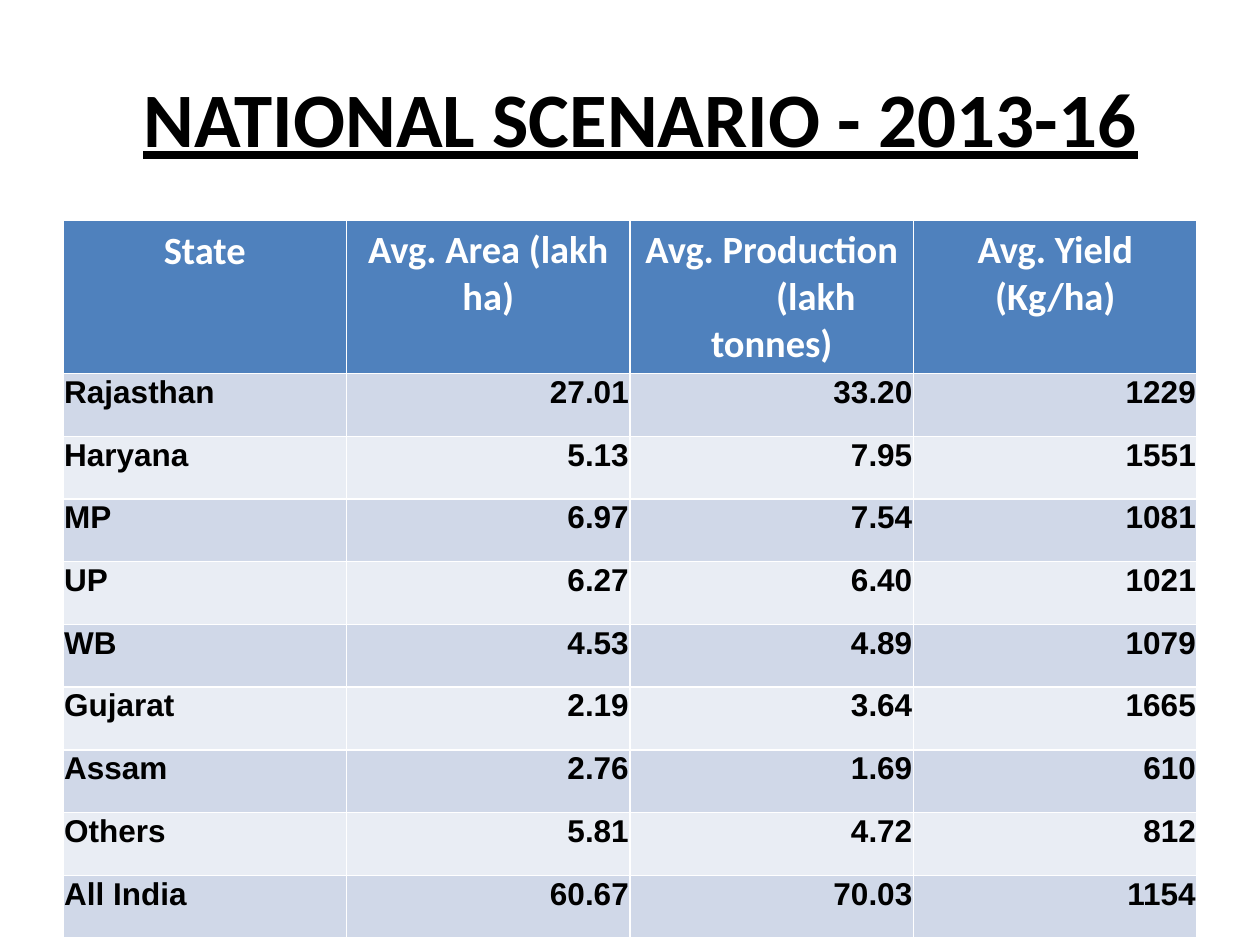
from pptx import Presentation
from pptx.dml.color import RGBColor
from pptx.enum.text import MSO_ANCHOR, PP_ALIGN
from pptx.util import Inches, Pt

LEFT, CENTER, RIGHT = PP_ALIGN.LEFT, PP_ALIGN.CENTER, PP_ALIGN.RIGHT
MIDDLE = MSO_ANCHOR.MIDDLE

COLORS = {
    "header": "4F81BD",
    "band_dark": "D0D8E8",
    "band_light": "E9EDF4",
    "white": "FFFFFF",
    "black": "000000",
}

TITLE = "NATIONAL SCENARIO - 2013-16"
HEADERS = ["State", "Avg. Area (lakh ha)", "Avg. Production\n(lakh\ntonnes)", "Avg. Yield (Kg/ha)"]
STATES = [
    ("Rajasthan", "27.01", "33.20", "1229"),
    ("Haryana", "5.13", "7.95", "1551"),
    ("MP", "6.97", "7.54", "1081"),
    ("UP", "6.27", "6.40", "1021"),
    ("WB", "4.53", "4.89", "1079"),
    ("Gujarat", "2.19", "3.64", "1665"),
    ("Assam", "2.76", "1.69", "610"),
    ("Others", "5.81", "4.72", "812"),
    ("All India", "60.67", "70.03", "1154"),
]
TABLE_WIDTH, HEADER_HEIGHT, BODY_HEIGHT = 9, 0.94, 4.48


def format_text(text_frame, font_name, size, color, alignment):
    for paragraph in text_frame.paragraphs:
        paragraph.alignment = alignment
        for run in paragraph.runs:
            run.font.name = font_name
            run.font.size = Pt(size)
            run.font.bold = True
            run.font.color.rgb = RGBColor.from_string(COLORS[color])


def set_margins(cell, left, top, right, bottom):
    cell.margin_left, cell.margin_top = Inches(left), Inches(top)
    cell.margin_right, cell.margin_bottom = Inches(right), Inches(bottom)


def fill_cell(cell, text, fill):
    cell.text_frame.text = text
    cell.fill.solid()
    cell.fill.fore_color.rgb = RGBColor.from_string(COLORS[fill])


def add_title(slide):
    title = slide.shapes.title
    title.left, title.top = Inches(0.5), Inches(0.3)
    title.width, title.height = Inches(9.17), Inches(1.25)
    text_frame = title.text_frame
    text_frame.text = TITLE
    text_frame.vertical_anchor = MIDDLE
    format_text(text_frame, "Calibri", 44, "black", CENTER)
    text_frame.paragraphs[0].runs[0].font.underline = True


def add_state_table(slide):
    table = slide.shapes.add_table(
        len(STATES) + 1, len(HEADERS), Inches(0.5), Inches(1.75),
        Inches(TABLE_WIDTH), Inches(HEADER_HEIGHT + BODY_HEIGHT)).table
    for column in table.columns:
        column.width = Inches(TABLE_WIDTH / len(HEADERS))
    for index, row in enumerate(table.rows):
        row.height = Inches(BODY_HEIGHT / len(STATES) if index else HEADER_HEIGHT)

    # Header row
    for column_index, text in enumerate(HEADERS):
        cell = table.cell(0, column_index)
        fill_cell(cell, text, "header")
        format_text(cell.text_frame, "Calibri", 22, "white", CENTER)
    state_cell = table.cell(0, 0)
    set_margins(state_cell, 0.07, 0, 0.07, 0)
    state_cell.text_frame.paragraphs[0].line_spacing = 1.15
    # The unit in the production header sits right of centre
    unit = table.cell(0, 2).text_frame.paragraphs[1]
    unit._p.get_or_add_pPr().set("marL", str(Inches(0.7)))

    # One banded row per state
    for row_index, values in enumerate(STATES, start=1):
        band = "band_dark" if row_index % 2 else "band_light"
        for column_index, text in enumerate(values):
            cell = table.cell(row_index, column_index)
            fill_cell(cell, text, band)
            set_margins(cell, 0.01, 0.01, 0.01, 0)
            format_text(cell.text_frame, "Arial", 18, "black", RIGHT if column_index else LEFT)


def main():
    presentation = Presentation()
    presentation.slide_width, presentation.slide_height = Inches(10), Inches(7.5)
    slide = presentation.slides.add_slide(presentation.slide_layouts[5])
    add_title(slide)
    add_state_table(slide)
    presentation.save("out.pptx")


if __name__ == "__main__":
    main()
